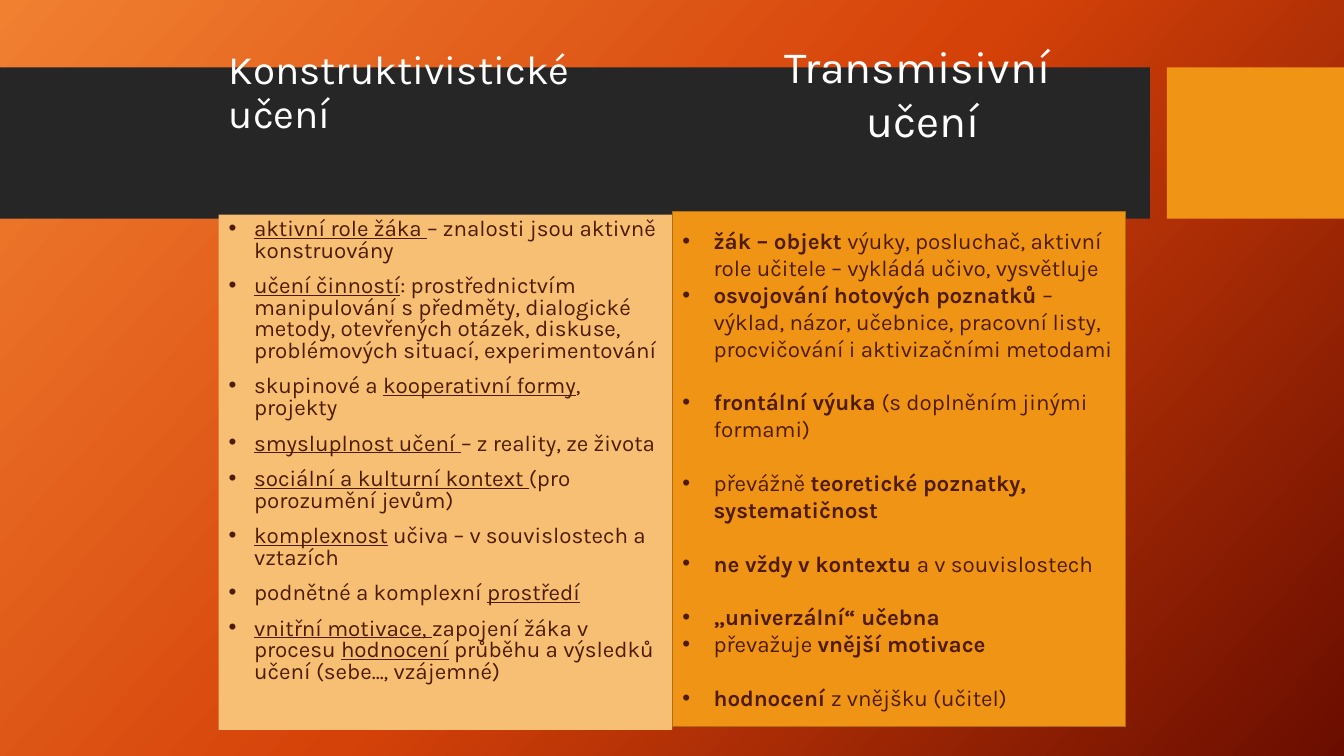
from copy import deepcopy
from dataclasses import dataclass
from typing import NamedTuple, Optional

from lxml import etree
from pptx import Presentation, util as u
from pptx.dml.color import RGBColor
from pptx.enum import shapes, text
from pptx.oxml.ns import qn

FONT = "Karla"
WHITE = RGBColor(0xFF, 0xFF, 0xFF)
BROWN = RGBColor(0x4E, 0x1B, 0x07)
CHARCOAL = RGBColor(0x26, 0x26, 0x26)
AMBER = RGBColor(0xF0, 0x94, 0x15)
AMBER_DARK = RGBColor(0xB2, 0x6D, 0x10)
PEACH = RGBColor(0xF6, 0xBF, 0x73)
BACKGROUND = [
    (0, RGBColor(0xF1, 0x80, 0x31)),
    (0.5, RGBColor(0xD5, 0x42, 0x09)),
    (1, RGBColor(0x6A, 0x0D, 0x00)),
]


class Phrase(NamedTuple):
    words: str
    key: bool = False


@dataclass
class Item:
    phrases: list[Phrase]
    before: float = 0


@dataclass
class Band:
    left: float
    width: float
    color: RGBColor


@dataclass
class Panel:
    left: float
    top: float
    fill: RGBColor
    line: Optional[RGBColor]
    anchor: text.MSO_ANCHOR
    indent: float
    spacing: float
    emphasis: str
    items: list[Item]


BANDS = [Band(0, 28.98, CHARCOAL), Band(29.41, 4.46, AMBER)]

GAP_LEFT = 10
GAP_RIGHT = 19.2

CONSTRUCTIVIST = Panel(
    5.51, 5.41, PEACH, None, text.MSO_ANCHOR.TOP, 0.64, 0.8, "underline", [
        Item([Phrase("aktivní role žáka ", True),
              Phrase("– znalosti jsou aktivně konstruovány")]),
        Item([Phrase("učení činností", True),
              Phrase(": prostřednictvím manipulování s předměty, dialogické "
                     "metody, otevřených otázek, diskuse, problémových situací, "
                     "experimentování")], GAP_LEFT),
        Item([Phrase("skupinové a "), Phrase("kooperativní formy", True),
              Phrase(", projekty")], GAP_LEFT),
        Item([Phrase("smysluplnost učení ", True),
              Phrase("– z reality, ze života")], GAP_LEFT),
        Item([Phrase("sociální a kulturní kontext ", True),
              Phrase("(pro porozumění jevům)")], GAP_LEFT),
        Item([Phrase("komplexnost", True),
              Phrase(" učiva – v souvislostech a vztazích")], GAP_LEFT),
        Item([Phrase("podnětné a komplexní "),
              Phrase("prostředí", True)], GAP_LEFT),
        Item([Phrase("vnitřní motivace, ", True),
              Phrase("zapojení žáka v procesu "), Phrase("hodnocení", True),
              Phrase(" průběhu a výsledků učení (sebe..., vzájemné)")], GAP_LEFT),
    ])

TRANSMISSIVE = Panel(
    16.94, 5.33, AMBER, AMBER_DARK, text.MSO_ANCHOR.MIDDLE, 0.79, 1.0, "bold", [
        Item([Phrase("žák – objekt ", True),
              Phrase("výuky, posluchač, aktivní role učitele – vykládá učivo, "
                     "vysvětluje")]),
        Item([Phrase("osvojování hotových poznatků ", True),
              Phrase("– výklad, názor, učebnice, pracovní listy, procvičování "
                     "i aktivizačními metodami")]),
        Item([Phrase("frontální výuka ", True),
              Phrase("(s doplněním jinými formami)")], GAP_RIGHT),
        Item([Phrase("převážně "),
              Phrase("teoretické poznatky, systematičnost", True)], GAP_RIGHT),
        Item([Phrase("ne vždy v kontextu ", True),
              Phrase("a v souvislostech")], GAP_RIGHT),
        Item([Phrase("„univerzální“ učebna", True)], GAP_RIGHT),
        Item([Phrase("převažuje "), Phrase("vnější motivace", True)]),
        Item([Phrase("hodnocení ", True),
              Phrase("z vnějšku (učitel)")], GAP_RIGHT),
    ])


def place(sp, left: float, top: float, width: float, height: float) -> None:
    sp.left, sp.top = u.Cm(left), u.Cm(top)
    sp.width, sp.height = u.Cm(width), u.Cm(height)


def add_run(p, words: str, size: float, color: RGBColor):
    r = p.add_run()
    r.text = words
    r.font.name = FONT
    r.font.size = u.Pt(size)
    r.font.color.rgb = color
    return r


def paint_background(s) -> None:
    fill = s.background.fill
    fill.gradient()
    fill.gradient_angle = 318
    last = s.element.find(".//" + qn("a:gsLst"))[-1]
    last.addprevious(deepcopy(last))
    for stop, (position, color) in zip(fill.gradient_stops, BACKGROUND):
        stop.position = position
        stop.color.rgb = color


def draw_band(s, band: Band) -> None:
    """Draw a header band behind the placeholders."""
    sp = s.shapes.add_shape(shapes.MSO_SHAPE.RECTANGLE, u.Cm(band.left), u.Cm(1.7),
                            u.Cm(band.width), u.Cm(3.81))
    sp.shadow.inherit = False
    sp.fill.solid()
    sp.fill.fore_color.rgb = band.color
    sp.line.fill.background()
    sp.element.getparent().insert(2, sp.element)


def add_bullet(p, indent: float) -> None:
    pPr = p._p.get_or_add_pPr()
    pPr.set("marL", str(u.Cm(indent)))
    pPr.set("indent", str(-u.Cm(indent)))
    etree.SubElement(pPr, qn("a:buFont"), typeface="Arial")
    etree.SubElement(pPr, qn("a:buChar"), char="•")


def fill_panel(sp, panel: Panel) -> None:
    place(sp, panel.left, panel.top, 11.43, 12.98)
    sp.fill.solid()
    sp.fill.fore_color.rgb = panel.fill
    if panel.line is not None:
        sp.line.color.rgb = panel.line
        sp.line.width = u.Pt(1)
    tf = sp.text_frame
    tf.word_wrap = True
    tf.auto_size = text.MSO_AUTO_SIZE.NONE
    tf.vertical_anchor = panel.anchor
    for i, item in enumerate(panel.items):
        p = tf.add_paragraph() if i else tf.paragraphs[0]
        add_bullet(p, panel.indent)
        p.alignment = text.PP_ALIGN.LEFT
        p.line_spacing = panel.spacing
        p.space_before, p.space_after = u.Pt(item.before), u.Pt(0)
        for phrase in item.phrases:
            r = add_run(p, phrase.words, 16, BROWN)
            setattr(r.font, panel.emphasis, phrase.key)


def write_title(sp) -> None:
    place(sp, 5.51, 0.76, 9.22, 3.18)
    tf = sp.text_frame
    tf.word_wrap = True
    tf.auto_size = text.MSO_AUTO_SIZE.NONE
    tf.vertical_anchor = text.MSO_ANCHOR.MIDDLE
    p = tf.paragraphs[0]
    p.alignment = text.PP_ALIGN.LEFT
    p.line_spacing = 0.9
    add_run(p, "Konstruktivistické", 28.8, WHITE)
    p.add_line_break()
    add_run(p, "učení", 28.8, WHITE)


def add_second_heading(s) -> None:
    sp = s.shapes.add_textbox(u.Cm(18.16), u.Cm(0.86), u.Cm(10.21), u.Cm(3))
    tf = sp.text_frame
    tf.word_wrap = True
    tf.auto_size = text.MSO_AUTO_SIZE.SHAPE_TO_FIT_TEXT
    for i, words in enumerate(["Transmisivní ", "učení"]):
        p = tf.add_paragraph() if i else tf.paragraphs[0]
        p.alignment = text.PP_ALIGN.CENTER
        add_run(p, words, 32, WHITE)


def main() -> None:
    prs = Presentation()
    prs.slide_width, prs.slide_height = u.Cm(33.87), u.Cm(19.05)
    s = prs.slides.add_slide(prs.slide_layouts.get_by_name("Two Content"))
    paint_background(s)
    for band in BANDS:
        draw_band(s, band)
    write_title(s.shapes.title)
    for idx, panel in enumerate([CONSTRUCTIVIST, TRANSMISSIVE], start=1):
        fill_panel(s.placeholders[idx], panel)
    add_second_heading(s)
    prs.save("out.pptx")


if __name__ == "__main__":
    main()
